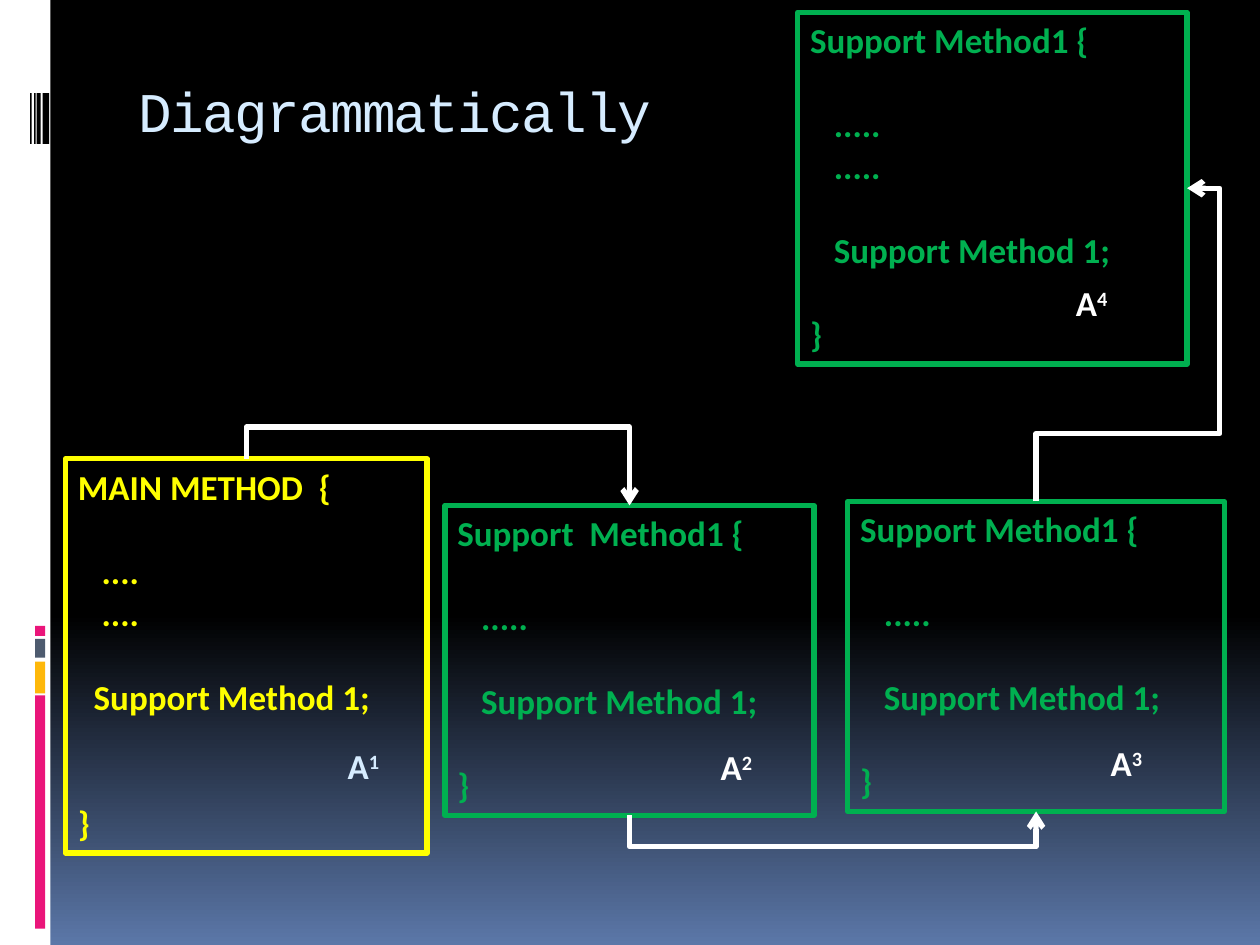
from lxml.etree import SubElement
from pptx import Presentation
from pptx.dml.color import RGBColor
from pptx.enum.shapes import MSO_CONNECTOR, MSO_SHAPE
from pptx.enum.text import MSO_ANCHOR, PP_ALIGN
from pptx.oxml.ns import qn
from pptx.util import Cm, Pt

BLACK = RGBColor(0x00, 0x00, 0x00)
WHITE = RGBColor(0xFF, 0xFF, 0xFF)
BLUE = RGBColor(0x5B, 0x77, 0xA8)
PALE = RGBColor(0xD6, 0xEC, 0xFF)
PINK = RGBColor(0xEA, 0x15, 0x7A)
AMBER = RGBColor(0xFE, 0xB8, 0x0A)
SLATE = RGBColor(0x4E, 0x5B, 0x6F)
YELLOW = RGBColor(0xFF, 0xFF, 0x00)
GREEN = RGBColor(0x00, 0xB0, 0x50)

LINE_PT = 24  # height of one line of code
TOP, BOTTOM, RIGHT = 0, 2, 3  # connection sites of a rectangle

DOTS = (".....", 0.48, 0)
CALL = ("Support Method 1;", 0.48, 1)
END = ("}", 0, 1)


def add_run(p, text, size=20, color=WHITE, font="Calibri", bold=True, **attrs):
    r = p.add_run()
    r.text = text
    r.font.size, r.font.name, r.font.bold = Pt(size), font, bold
    r.font.color.rgb = color
    for name, value in attrs.items():
        r.font._element.set(name, str(value))
    return r


def add_rect(s, x, y, w, h):
    sp = s.shapes.add_shape(MSO_SHAPE.RECTANGLE, Cm(x), Cm(y), Cm(w), Cm(h))
    sp.shadow.inherit = False
    return sp


def add_side_band(s, x, y, w, h):
    # White band, coloured blocks, barcode: offsets from the band's corner
    parts = [(0, 0, w, h, WHITE)]
    parts += [(0.71, top, 0.2, height, color) for top, height, color in (
        (14.02, 4.7, PINK), (13.34, 0.64, AMBER),
        (12.88, 0.38, SLATE), (12.62, 0.2, PINK))]
    parts += [(left, 1.88, width, 1.02, BLACK) for left, width in (
        (0.86, 0.13), (0.74, 0.08), (0.69, 0.03), (0.61, 0.03))]
    for left, top, width, height, color in parts:
        sp = add_rect(s, x + left, y + top, width, height)
        sp.fill.solid()
        sp.fill.fore_color.rgb = color
        sp.line.fill.background()


def add_title(s, text, x, y, w, h):
    sp = s.shapes.title
    sp.left, sp.top, sp.width, sp.height = Cm(x), Cm(y), Cm(w), Cm(h)
    tf = sp.text_frame
    tf.word_wrap = True
    tf.vertical_anchor = MSO_ANCHOR.TOP
    p = tf.paragraphs[0]
    p.alignment = PP_ALIGN.LEFT
    add_run(p, text, size=32, color=PALE, font="Courier New", bold=False, spc=-100)


def add_method(s, lines, color, x, y, w, h):
    """Code box; each line is (text, indent in cm, blank lines above)."""
    sp = add_rect(s, x, y, w, h)
    sp.fill.background()
    sp.line.color.rgb, sp.line.width = color, Pt(3)
    tf = sp.text_frame
    tf.word_wrap = True
    tf.vertical_anchor = MSO_ANCHOR.TOP
    for i, (text, indent, gap) in enumerate(lines):
        p = tf.add_paragraph() if i else tf.paragraphs[0]
        p.alignment = PP_ALIGN.LEFT
        p.space_before = Pt(gap * LINE_PT)
        p._p.get_or_add_pPr().set("marL", str(Cm(indent)))
        add_run(p, text, color=color)
    return sp


def add_label(s, box, number, dx, dy, color=WHITE):
    sp = s.shapes.add_textbox(box.left + Cm(dx), box.top + Cm(dy), Cm(1.78), Cm(1.12))
    sp.text_frame.word_wrap = True
    p = sp.text_frame.paragraphs[0]
    add_run(p, "A", color=color)
    add_run(p, number, color=color, baseline=30000)


def get_site(box, site):
    x, y = box.left + box.width // 2, box.top + box.height // 2
    return {TOP: (x, box.top), BOTTOM: (x, box.top + box.height),
            RIGHT: (box.left + box.width, y)}[site]


def add_elbow(s, start, start_site, end, end_site, turn_y, turn_x=None):
    """Bent arrow leaving vertically, turning at turn_y and then at turn_x."""
    (x1, y1), (x2, y2) = get_site(start, start_site), get_site(end, end_site)
    c = s.shapes.add_connector(MSO_CONNECTOR.ELBOW, x1, y1, x2, y2)
    c.begin_connect(start, start_site)
    c.end_connect(end, end_site)

    # Frame turned a quarter about its centre
    up = y2 < y1
    c.width, c.height = abs(y2 - y1), abs(x2 - x1)
    c.left = (x1 + x2 - c.width) // 2
    c.top = (y1 + y2 - c.height) // 2
    spPr = c._element.spPr
    xfrm = spPr.find(qn("a:xfrm"))
    xfrm.set("rot", str((90 if up else 270) * 60000))
    xfrm.set("flipH", "1")
    xfrm.set("flipV", "1" if up else "0")

    # Turning points as shares of the distance
    shares = [(Cm(turn_y) - y1) / (y2 - y1)]
    if turn_x is not None:
        shares.append((Cm(turn_x) - x1) / (x2 - x1))
    geom = spPr.find(qn("a:prstGeom"))
    geom.set("prst", f"bentConnector{len(shares) + 2}")
    guides = geom.find(qn("a:avLst"))
    if guides is None:
        guides = SubElement(geom, qn("a:avLst"))
    for i, share in enumerate(shares, 1):
        SubElement(guides, qn("a:gd"), name=f"adj{i}", fmla=f"val {round(share * 100000)}")

    c.line.color.rgb, c.line.width = WHITE, Pt(3)
    SubElement(c.line._get_or_add_ln(), qn("a:tailEnd"), type="arrow")
    SubElement(spPr, qn("a:effectLst"))


def main():
    prs = Presentation()
    prs.slide_width, prs.slide_height = Cm(25.4), Cm(19.05)
    s = prs.slides.add_slide(prs.slide_layouts[5])

    # Background: black fading to blue at the foot
    fill = s.background.fill
    fill.gradient()
    fill.gradient_angle = 270
    for stop, position, color in zip(fill.gradient_stops, (0.65, 1), (BLACK, BLUE)):
        stop.position = position
        stop.color.rgb = color

    add_side_band(s, 0, 0, 1.02, 19.05)
    add_title(s, "Diagrammatically", 2.54, 1.42, 13.13, 2.54)

    # Method boxes
    head = ("Support Method1 {", 0, 0)
    first_dots = (DOTS[0], DOTS[1], 1)
    main_box = add_method(
        s, [("MAIN METHOD  {", 0, 0), ("....", 0.48, 1), ("....", 0.48, 0),
            ("Support Method 1;", 0.32, 1), ("}", 0, 2)],
        YELLOW, 1.32, 9.25, 7.29, 7.95)
    second = add_method(s, [("Support  Method1 {", 0, 0), first_dots, CALL, END],
                        GREEN, 8.97, 10.19, 7.44, 6.25)
    third = add_method(s, [head, first_dots, CALL, END],
                       GREEN, 17.09, 10.11, 7.59, 6.25)
    fourth = add_method(s, [head, first_dots, DOTS, CALL, END],
                        GREEN, 16.08, 0.25, 7.85, 7.09)

    # Calls from one method to the next
    add_elbow(s, main_box, TOP, second, TOP, 8.61)
    add_elbow(s, second, BOTTOM, third, BOTTOM, 17.07)
    add_elbow(s, third, TOP, fourth, RIGHT, 8.74, 24.59)

    # Activation labels
    add_label(s, main_box, "1", 5.44, 5.64, PALE)
    add_label(s, second, "2", 5.31, 4.72)
    add_label(s, third, "3", 5.05, 4.72)
    add_label(s, fourth, "4", 5.36, 5.31)

    prs.save("out.pptx")


if __name__ == "__main__":
    main()
